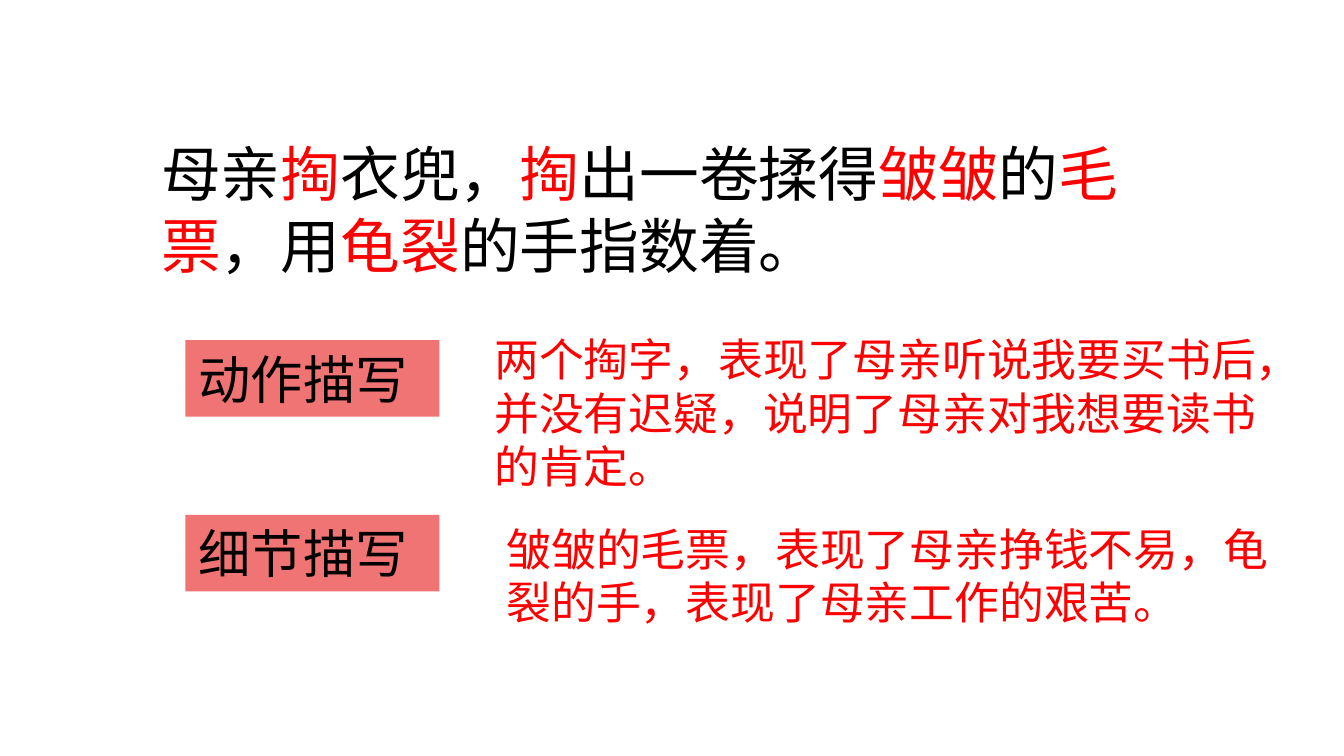
from lxml import etree
from pptx import Presentation
from pptx.dml.color import RGBColor as RGB
from pptx.enum.shapes import MSO_SHAPE as Shape
from pptx.enum.text import MSO_ANCHOR as Anchor, PP_ALIGN as Align
from pptx.oxml.ns import qn
from pptx.util import Inches, Pt

COLORS = {"ink": "000000", "accent": "FF0000", "label": "F07474"}
SANS, SERIF = "Noto Sans CJK SC", "Times New Roman"
FRAME = {
    "word_wrap": True,
    "vertical_anchor": Anchor.TOP,
    "margin_left": Inches(0.1),
    "margin_right": Inches(0.1),
    "margin_top": Inches(0.05),
    "margin_bottom": Inches(0.05),
}

deck = Presentation()
deck.slide_width, deck.slide_height = Inches(10), Inches(10 * 9 / 16)
page = deck.slides.add_slide(deck.slide_layouts[6])


def area(left, top, width, height):
    """Turn percentages of the slide's width and height into lengths."""
    across, down = deck.slide_width / 100, deck.slide_height / 100
    return [int(left * across), int(top * down), int(width * across), int(height * down)]


def write(box, spans, size, latin=SANS):
    """Fill a box with one paragraph of (text, colour name) spans."""
    for name, value in FRAME.items():
        setattr(box.text_frame, name, value)
    para = box.text_frame.paragraphs[0]
    para.alignment = Align.LEFT
    para.line_spacing = Pt(size * 1.2)
    for text, color in spans:
        span = para.add_run()
        span.text = text
        span.font.size = Pt(size)
        span.font.color.rgb = RGB.from_string(COLORS[color])
        span.font.name = latin
        etree.SubElement(span.font._element, qn("a:ea"), typeface=SANS)


# Quoted sentence: the key words, every second part, stand out
parts = ["母亲", "掏", "衣兜，", "掏", "出一卷揉得", "皱皱", "的", "毛票",
         "，用", "龟裂", "的手指数着。"]
quote = page.shapes.add_textbox(*area(11, 17.24, 78, 20.98))
write(quote, [(part, ("ink", "accent")[i % 2]) for i, part in enumerate(parts)], 32)
quote.text_frame.margin_right = Inches(0.2)  # sixteen characters to the line

# Labels of the two kinds of description
for text, top in (("动作描写", 45), ("细节描写", 68.1)):
    label = page.shapes.add_shape(Shape.RECTANGLE, *area(13.8, top, 18.9, 10.13))
    label.shadow.inherit = False
    label.fill.solid()
    label.fill.fore_color.rgb = RGB.from_string(COLORS["label"])
    label.line.fill.background()
    write(label, [(text, "ink")], 28)

# Explanations beside the labels
notes = [
    ("两个掏字，表现了母亲听说我要买书后，并没有迟疑，说明了母亲对我想要读书的肯定。",
     (35.8, 43, 60.6, 23.29), SERIF),
    ("皱皱的毛票，表现了母亲挣钱不易，龟裂的手，表现了母亲工作的艰苦。",
     (36.7, 68.1, 58.9, 16.18), SANS),
]
for text, place, latin in notes:
    write(page.shapes.add_textbox(*area(*place)), [(text, "accent")], 24, latin)

deck.save("out.pptx")
